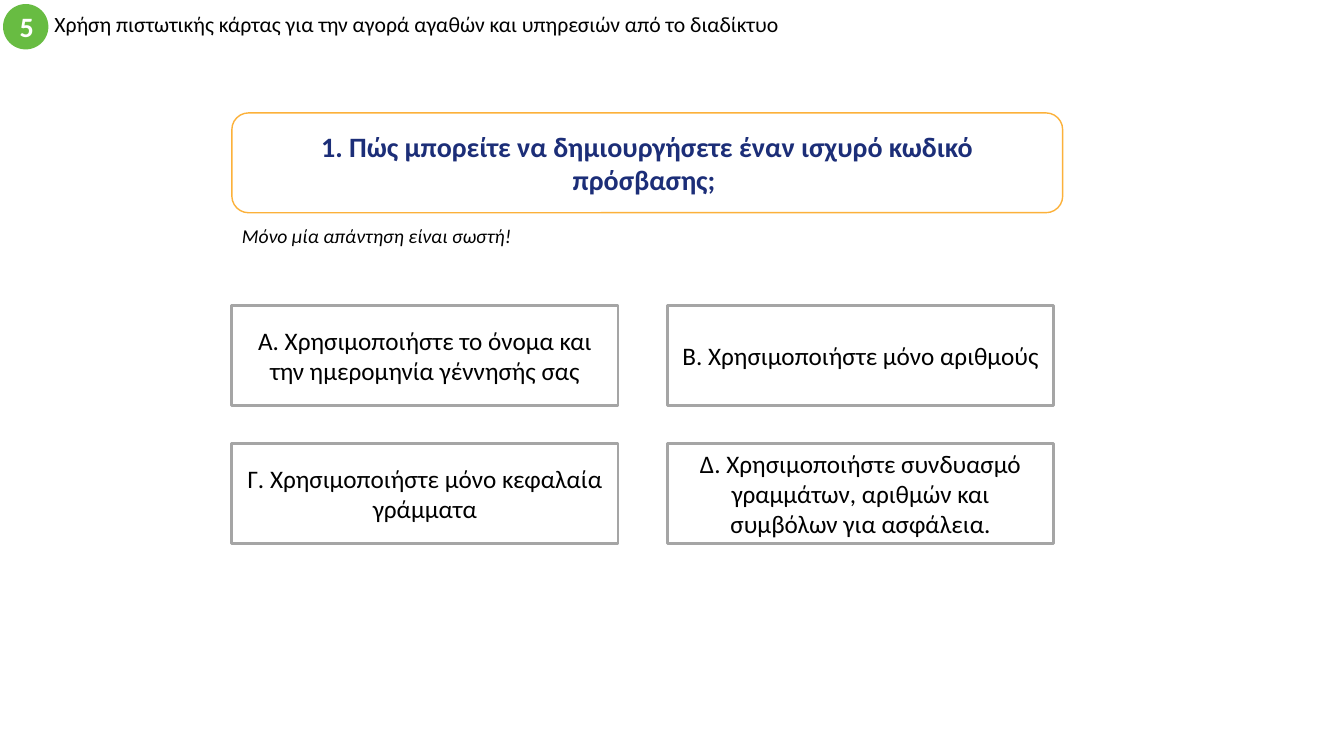
from pptx import Presentation
from pptx.dml.color import RGBColor as RGB
from pptx.enum.shapes import MSO_SHAPE as Shape
from pptx.enum.text import MSO_ANCHOR as Anchor, PP_ALIGN as Align
from pptx.util import Inches, Pt

COLORS = {
    "white": "FFFFFF", "black": "000000", "green": "68BC42",
    "orange": "FCB13A", "navy": "1C2E78", "gray": "A5A5A5",
}

deck = Presentation()
deck.slide_width, deck.slide_height = Inches(13.33), Inches(7.5)
slide = deck.slides.add_slide(deck.slide_layouts[6])


def write(holder, text, color, align=Align.CENTER, anchor=Anchor.MIDDLE, **style):
    frame = holder.text_frame
    frame.word_wrap = True
    frame.vertical_anchor = anchor
    paragraph = frame.paragraphs[0]
    paragraph.alignment = align
    run = paragraph.add_run()
    run.text = text
    run.font.color.rgb = RGB.from_string(COLORS[color])
    for name, value in {"name": "Calibri", **style}.items():
        setattr(run.font, name, value)
    return paragraph


def add_panel(kind, box, fill, line=None, weight=1):
    panel = slide.shapes.add_shape(kind, *map(Inches, box))
    panel.shadow.inherit = False
    panel.fill.solid()
    panel.fill.fore_color.rgb = RGB.from_string(COLORS[fill])
    if line:
        panel.line.color.rgb = RGB.from_string(COLORS[line])
        panel.line.width = Pt(weight)
    else:
        panel.line.fill.background()
    return panel


# Header: section title and number
title = slide.shapes.add_textbox(*map(Inches, (0.44, 0.04, 8, 0.45)))
heading = write(title, "Χρήση πιστωτικής κάρτας για την αγορά αγαθών και υπηρεσιών από το διαδίκτυο",
                "black", Align.LEFT, size=Pt(15.5))
heading.line_spacing = 0.7
badge = add_panel(Shape.OVAL, (0.03, 0.04, 0.45, 0.45), "green")
write(badge, "5", "white", size=Pt(20), bold=True)

# Grid shared by the question and its answers
left, top = 2.3, 3.03
column_step, row_step = 4.32, 1.37
answer_width, box_height = 3.83, 0.99

# Question and hint
question = add_panel(Shape.ROUNDED_RECTANGLE, (left, 1.12, 8.24, box_height), "white", "orange")
write(question, "1. Πώς μπορείτε να δημιουργήσετε έναν ισχυρό κωδικό πρόσβασης; ",
      "navy", size=Pt(20), bold=True)
hint = slide.shapes.add_textbox(*map(Inches, (left, 2.17, 4, 0.34)))
write(hint, "Μόνο μία απάντηση είναι σωστή!", "black", Align.LEFT, Anchor.TOP,
      size=Pt(14), italic=True)

# Answers, two per row
answers = [
    "A. Χρησιμοποιήστε το όνομα και την ημερομηνία γέννησής σας",
    "B. Χρησιμοποιήστε μόνο αριθμούς",
    "Γ. Χρησιμοποιήστε μόνο κεφαλαία γράμματα",
    "Δ. Χρησιμοποιήστε συνδυασμό γραμμάτων, αριθμών και συμβόλων για ασφάλεια.",
]
for index, answer in enumerate(answers):
    row, column = divmod(index, 2)
    box = (left + column * column_step, top + row * row_step, answer_width, box_height)
    write(add_panel(Shape.RECTANGLE, box, "white", "gray", 2), answer, "black", size=Pt(18))

deck.save("out.pptx")
